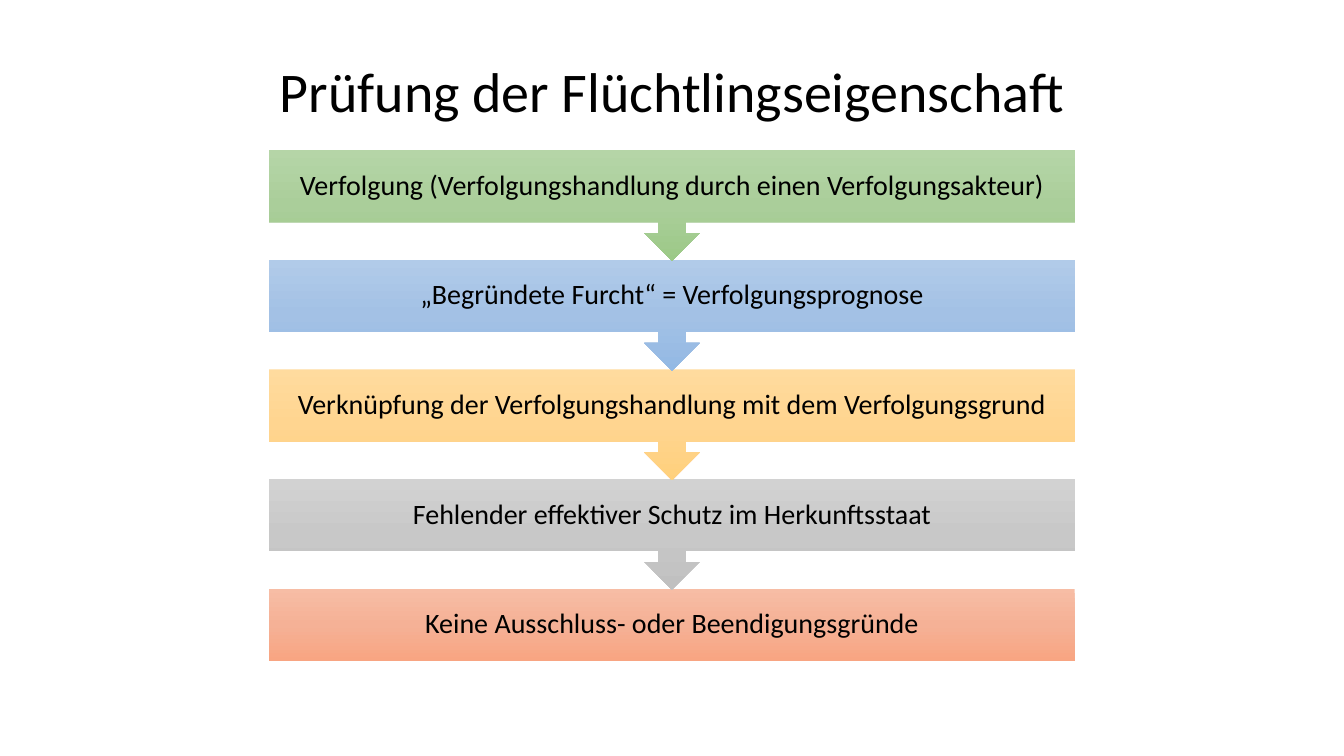
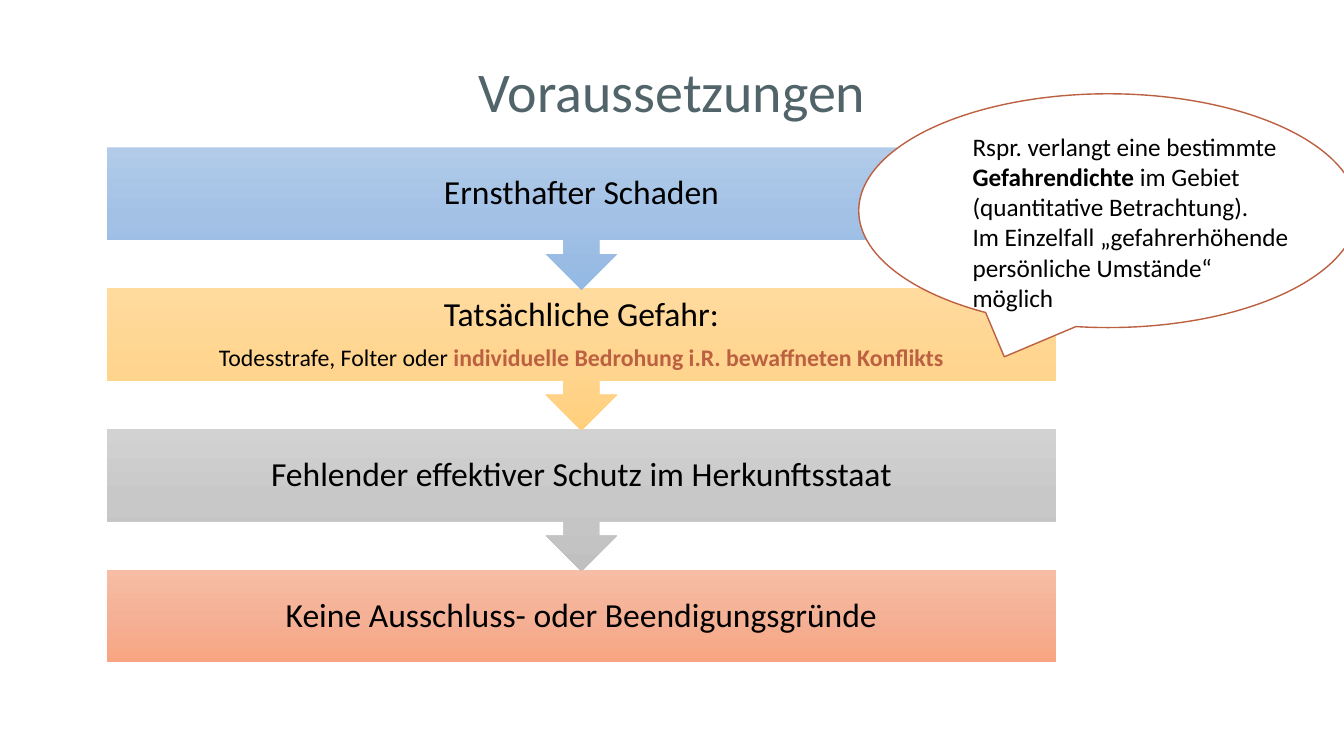
from copy import deepcopy

from pptx import Presentation
from pptx.dml.color import RGBColor
from pptx.enum.shapes import MSO_SHAPE
from pptx.enum.text import MSO_ANCHOR, MSO_AUTO_SIZE, PP_ALIGN
from pptx.util import Pt

CENTER, LEFT = PP_ALIGN.CENTER, PP_ALIGN.LEFT
MIDDLE, TOP = MSO_ANCHOR.MIDDLE, MSO_ANCHOR.TOP
NO_AUTOFIT = MSO_AUTO_SIZE.NONE
STEP, LAST_STEP = MSO_SHAPE.DOWN_ARROW_CALLOUT, MSO_SHAPE.RECTANGLE
BUBBLE = MSO_SHAPE.OVAL_CALLOUT

FONT = "Calibri"
BLACK, WHITE, SLATE, RUST = "000000", "FFFFFF", "51646A", "BB6041"
GRADIENTS = {
    "green": ("B5D5A7", "AACE9A", "9CC987"),
    "blue": ("B1CBE9", "A3C1E5", "93B9E4"),
    "yellow": ("FFDB9E", "FFD590", "FFD07C"),
    "grey": ("D2D2D2", "C8C8C8", "C0C0C0"),
    "red": ("F7BDA5", "F5B196", "F8A582"),
}
TITLE_BOX = (66, 15, 828, 104.4)
BOX_SHARE = 0.65      # part of a step that is box, the rest is arrow
OVERLAP = 1.01        # each arrow tip just reaches into the next box

# A paragraph is a list of runs: (text, format that differs from the base)
PROTECTION = ("grey", [[("Fehlender effektiver Schutz im Herkunftsstaat", {})]])
EXCLUSION = ("red", [[("Keine Ausschluss- oder Beendigungsgründe", {})]])

SLIDES = [
    {
        "title": "Prüfung der Flüchtlingseigenschaft",
        "title_color": BLACK,
        "flow": {"left": 192.3, "top": 107.3, "width": 575.4, "pitch": 78.3, "size": 20},
        "steps": [
            ("green", [[("Verfolgung (Verfolgungshandlung durch einen Verfolgungsakteur)", {})]]),
            ("blue", [[("„Begründete Furcht“ = Verfolgungsprognose", {})]]),
            ("yellow", [[("Verknüpfung der Verfolgungshandlung mit dem Verfolgungsgrund", {})]]),
            PROTECTION,
            EXCLUSION,
        ],
    },
    {
        "title": "Voraussetzungen",
        "title_color": SLATE,
        "flow": {"left": 76.4, "top": 105.3, "width": 677.8, "pitch": 100.6, "size": 24},
        "steps": [
            ("blue", [[("Ernsthafter Schaden", {})]]),
            ("yellow", [
                [("Tatsächliche Gefahr:", {})],
                [("Todesstrafe, Folter oder ", {"size": 17}),
                 ("individuelle Bedrohung i.R. bewaffneten Konflikts",
                  {"size": 17, "bold": True, "color": RUST})],
            ]),
            PROTECTION,
            EXCLUSION,
        ],
        "bubble": {
            "box": (613.4, 67, 356.4, 167),
            "text_box": (687.6, 90, 241.2, 138.2),
            "text": [
                [("Rspr. verlangt eine bestimmte ", {}),
                 ("Gefahrendichte", {"bold": True}),
                 (" im Gebiet (quantitative Betrachtung).", {})],
                [("Im Einzelfall „gefahrerhöhende persönliche Umstände“ möglich", {})],
            ],
        },
    },
]


def rgb(color):
    return RGBColor.from_string(color)


def pts(values):
    return [Pt(v) for v in values]


def write(shape, paragraphs, size, color=BLACK, align=CENTER, anchor=MIDDLE,
          spacing=0.9, after=0, margins=(7.2, 3.6)):
    tf = shape.text_frame
    side, edge = pts(margins)
    frame = {"word_wrap": True, "auto_size": NO_AUTOFIT, "vertical_anchor": anchor,
             "margin_left": side, "margin_right": side,
             "margin_top": edge, "margin_bottom": edge}
    for name, value in frame.items():
        setattr(tf, name, value)
    for i, runs in enumerate(paragraphs):
        p = tf.add_paragraph() if i else tf.paragraphs[0]
        p.alignment, p.line_spacing = align, spacing
        if i < len(paragraphs) - 1:
            p.space_after = Pt(after)
        for text, own in runs:
            r = p.add_run()
            r.text = text
            fmt = {"name": FONT, "size": size, "bold": False, "color": color, **own}
            r.font.color.rgb = rgb(fmt.pop("color"))
            fmt["size"] = Pt(fmt["size"])
            for name, value in fmt.items():
                setattr(r.font, name, value)


def fill_gradient(shape, colors):
    """Fill from top to bottom with evenly spaced colours."""
    fill = shape.fill
    fill.gradient()
    fill.gradient_angle = 270
    stop_list = shape._element.spPr.xpath(".//a:gsLst")[0]
    while len(stop_list) < len(colors):
        stop_list.append(deepcopy(stop_list[0]))
    for i, (stop, color) in enumerate(zip(fill.gradient_stops, colors)):
        stop.position = i / (len(colors) - 1)
        stop.color.rgb = rgb(color)


def add_flow(slide, steps, left, top, width, pitch, size):
    """Stack boxes joined by arrows, the last box without an arrow."""
    full = pitch * OVERLAP
    last = len(steps) - 1
    for i, (color, text) in reversed(list(enumerate(steps))):
        kind, height = (STEP, full) if i < last else (LAST_STEP, full * BOX_SHARE)
        sp = slide.shapes.add_shape(kind, *pts((left, top + i * pitch, width, height)))
        sp.shadow.inherit = False
        sp.line.fill.background()
        fill_gradient(sp, GRADIENTS[color])
        write(sp, text, size, after=size * 0.35, margins=(11.5, 0))


def add_bubble(slide, box, text_box, text):
    sp = slide.shapes.add_shape(BUBBLE, *pts(box))
    sp.shadow.inherit = False
    sp.fill.solid()
    sp.fill.fore_color.rgb = rgb(WHITE)
    sp.line.color.rgb = rgb(RUST)
    sp.line.width = Pt(1)
    tb = slide.shapes.add_textbox(*pts(text_box))
    write(tb, text, 18, align=LEFT, anchor=TOP, spacing=1.0)


def main():
    prs = Presentation()
    prs.slide_width, prs.slide_height = pts((960, 540))
    layout = prs.slide_layouts[5]
    title = layout.placeholders[0]
    title.left, title.top, title.width, title.height = pts(TITLE_BOX)
    for content in SLIDES:
        s = prs.slides.add_slide(layout)
        write(s.shapes.title, [[(content["title"], {})]], 40, content["title_color"])
        add_flow(s, content["steps"], **content["flow"])
        if "bubble" in content:
            add_bubble(s, **content["bubble"])
    prs.save("out.pptx")


if __name__ == "__main__":
    main()
